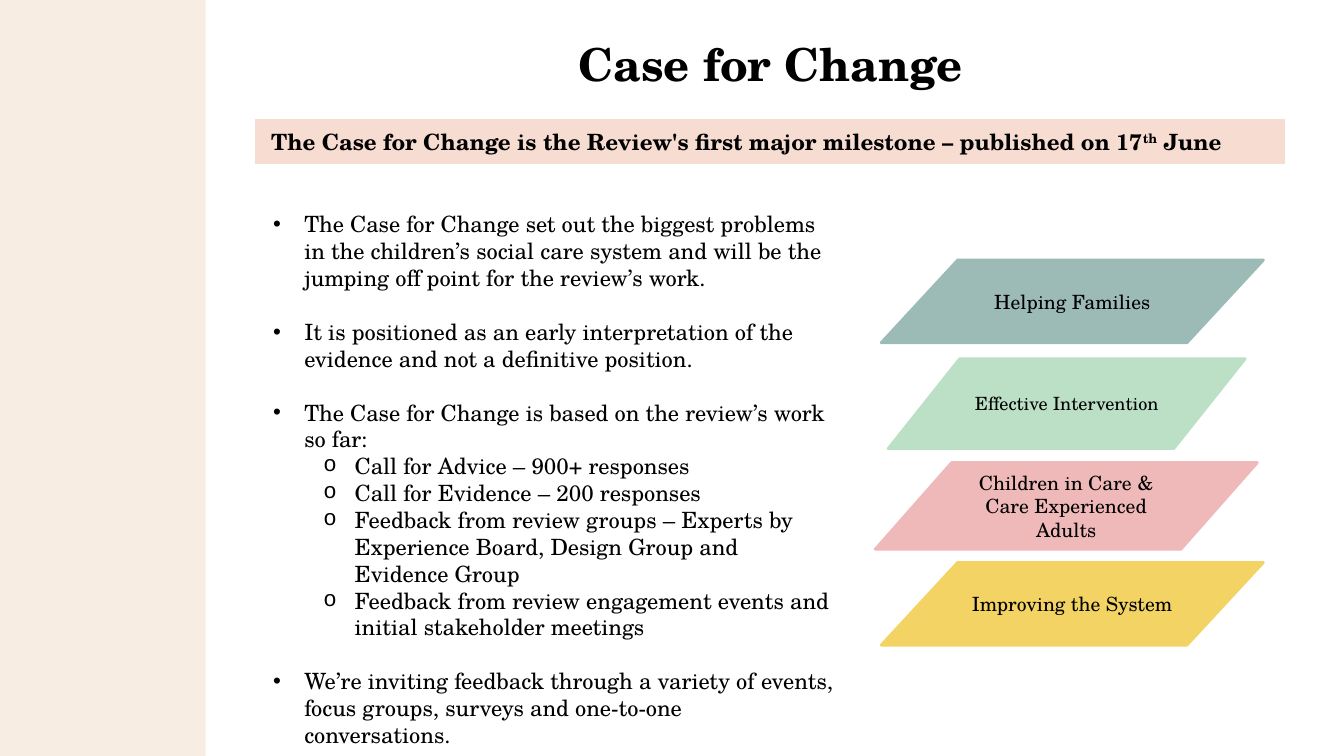
import pptx
import pptx.dml.color
import pptx.enum.shapes
import pptx.enum.text
import pptx.oxml.ns
import pptx.util
from lxml import etree

RGBColor = pptx.dml.color.RGBColor
MSO_SHAPE = pptx.enum.shapes.MSO_SHAPE
PP_ALIGN = pptx.enum.text.PP_ALIGN
MSO_ANCHOR = pptx.enum.text.MSO_ANCHOR
Pt = pptx.util.Pt
qn = pptx.oxml.ns.qn

PX = 9144
FONT = "TeX Gyre Schola"
BLACK = RGBColor(0x00, 0x00, 0x00)
CREAM = RGBColor(0xF7, 0xED, 0xE3)
PEACH = RGBColor(0xF7, 0xDC, 0xD2)
TEAL = RGBColor(0x9C, 0xBA, 0xB6)
GREEN = RGBColor(0xBC, 0xE0, 0xC6)
PINK = RGBColor(0xF0, 0xB9, 0xB9)
YELLOW = RGBColor(0xF2, 0xD3, 0x63)

BULLETS = [("•", "Arial", 31), ("o", "Courier New", 81)]
HANGING = 31
BLANK_LINE = 19.2

POINTS = [
    (0, "The Case for Change set out the biggest problems in the children’s social care system "
        "and will be the jumping off point for the review’s work."),
    (0, "It is positioned as an early interpretation of the evidence and not a definitive position."),
    (0, "The Case for Change is based on the review’s work so far:"),
    (1, "Call for Advice – 900+ responses"),
    (1, "Call for Evidence – 200 responses"),
    (1, "Feedback from review groups – Experts by Experience Board, Design Group and Evidence Group"),
    (1, "Feedback from review engagement events and initial stakeholder meetings"),
    (0, "We’re inviting feedback through a variety of events, focus groups, surveys and "
        "one-to-one conversations."),
]

THEMES = [
    ("Helping Families", TEAL, (874, 258, 379, 82), 14),
    ("Effective Intervention", GREEN, (881, 356, 354, 89), 13),
    ("Children in Care & Care Experienced Adults", PINK, (868, 459, 379, 86), 14),
    ("Improving the System", YELLOW, (874, 558, 379, 82), 14),
]


def emu(box):
    return [length * PX for length in box]


def style(paragraph, size, bold=False, align=PP_ALIGN.LEFT):
    paragraph.alignment = align
    paragraph.font.name = FONT
    paragraph.font.size = Pt(size)
    paragraph.font.bold = bold
    paragraph.font.color.rgb = BLACK


def add_block(slide, kind, box, color, line_width=0):
    block = slide.shapes.add_shape(kind, *emu(box))
    block.shadow.inherit = False
    block.fill.solid()
    block.fill.fore_color.rgb = color
    if line_width:
        block.line.color.rgb = color
        block.line.width = Pt(line_width)
    else:
        block.line.fill.background()
    return block


def add_text_area(slide, box):
    frame = slide.shapes.add_textbox(*emu(box)).text_frame
    frame.word_wrap = True
    return frame


def add_title(slide):
    frame = add_text_area(slide, (301, 43, 941, 47))
    frame.vertical_anchor = MSO_ANCHOR.MIDDLE
    heading = frame.paragraphs[0]
    heading.text = "Case for Change\u00a0"
    heading.line_spacing = 0.9
    style(heading, 32.4, True, PP_ALIGN.CENTER)


def add_banner(slide):
    frame = add_block(slide, MSO_SHAPE.RECTANGLE, (253, 119, 1021, 43), PEACH, 0.75).text_frame
    frame.margin_left = frame.margin_right = 16 * PX
    frame.margin_top = frame.margin_bottom = 8 * PX
    frame.vertical_anchor = MSO_ANCHOR.TOP
    milestone = frame.paragraphs[0]
    milestone.add_run().text = ("The Case for Change is the Review's first major milestone "
                                "– published on 17")
    ordinal = milestone.add_run()
    ordinal.text = "th"
    ordinal.font._element.set("baseline", "30000")
    milestone.add_run().text = " June"
    style(milestone, 16, True)


def add_bullet(paragraph, level):
    mark, mark_font, indent = BULLETS[level]
    properties = paragraph._p.get_or_add_pPr()
    properties.set("marL", str(indent * PX))
    properties.set("indent", str(-HANGING * PX))
    etree.SubElement(properties, qn("a:buFont")).set("typeface", mark_font)
    etree.SubElement(properties, qn("a:buChar")).set("char", mark)
    paragraph.level = level


def add_points(slide):
    frame = add_text_area(slide, (261, 204, 576, 522))
    for index, (level, text) in enumerate(POINTS):
        point = frame.add_paragraph() if index else frame.paragraphs[0]
        point.text = text
        add_bullet(point, level)
        if index and level == 0:
            point.space_before = Pt(BLANK_LINE)
        style(point, 16)


def add_theme(slide, label, color, box, size):
    frame = add_block(slide, MSO_SHAPE.FLOWCHART_DATA, box, color, 2).text_frame
    frame.word_wrap = True
    frame.vertical_anchor = MSO_ANCHOR.MIDDLE
    frame.paragraphs[0].text = label
    style(frame.paragraphs[0], size, align=PP_ALIGN.CENTER)


def main():
    deck = pptx.Presentation()
    deck.slide_width, deck.slide_height = emu((1333, 750))
    slide = deck.slides.add_slide(deck.slide_layouts[6])
    add_block(slide, MSO_SHAPE.RECTANGLE, (0, 0, 204, 750), CREAM)
    add_title(slide)
    add_banner(slide)
    add_points(slide)
    for theme in THEMES:
        add_theme(slide, *theme)
    deck.save("out.pptx")


if __name__ == "__main__":
    main()
